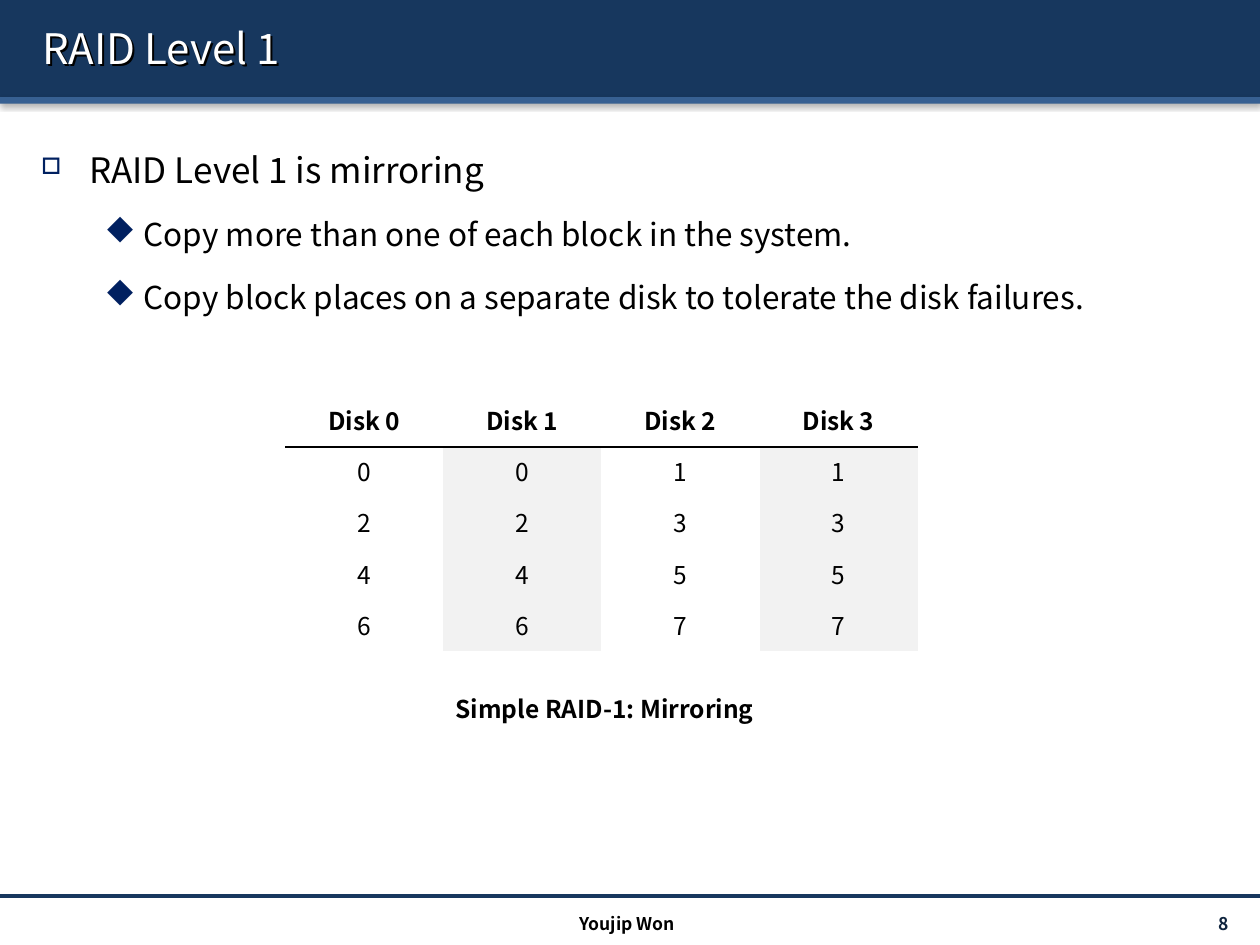
from lxml.etree import SubElement
from pptx import Presentation
from pptx.dml.color import RGBColor
from pptx.enum.shapes import MSO_CONNECTOR, MSO_SHAPE
from pptx.enum.text import MSO_ANCHOR, PP_ALIGN
from pptx.oxml.ns import qn
from pptx.util import Cm, Pt

FONT = "Noto Sans CJK KR"
COLORS = {
    "navy": "17375E",
    "blue": "376092",
    "bullet": "002060",
    "page": "0F243E",
    "black": "000000",
    "white": "FFFFFF",
    "mirror": "F2F2F2",
}
NO_TABLE_STYLE = "{2D5ABB26-0587-4C30-8999-92F81FD0307C}"

POINTS = [
    (0, "RAID Level 1 is mirroring"),
    (1, "Copy more than one of each block in the system."),
    (1, "Copy block places on a separate disk to tolerate the disk failures."),
]
# Per level: font size, left indent and hanging width in cm,
# Wingdings character (o is a square, u a diamond), bullet size in percent
LEVELS = [(20, 0.97, 0.97, "o", 65), (18, 2.07, 0.79, "u", 100)]

DISKS = ["Disk 0", "Disk 1", "Disk 2", "Disk 3"]
STRIPES = [[n, n, n + 1, n + 1] for n in range(0, 8, 2)]


def rgb(name):
    return RGBColor.from_string(COLORS[name])


def add_xml(parent, tag, **attributes):
    return SubElement(parent, qn(tag), {key: str(value) for key, value in attributes.items()})


def add_shadow(shape, blur, distance, direction, alpha):
    effects = add_xml(shape._element.spPr, "a:effectLst")
    shadow = add_xml(effects, "a:outerShdw", blurRad=Pt(blur), dist=Pt(distance),
                     dir=direction * 60000, algn="t", rotWithShape=0)
    color = add_xml(shadow, "a:srgbClr", val=COLORS["black"])
    add_xml(color, "a:alpha", val=alpha * 1000)


def set_font(paragraph, size, color="black", bold=False):
    font = paragraph.font
    font.name, font.size, font.bold = FONT, Pt(size), bold
    font.color.rgb = rgb(color)


def add_label(slide, box, text, size, color="black", bold=False,
              align=PP_ALIGN.LEFT, anchor=MSO_ANCHOR.TOP):
    label = slide.shapes.add_textbox(*map(Cm, box))
    frame = label.text_frame
    frame.word_wrap = True
    frame.vertical_anchor = anchor
    paragraph = frame.paragraphs[0]
    paragraph.text = text
    paragraph.alignment = align
    set_font(paragraph, size, color, bold)
    return label


def add_header(slide, box, title):
    left, top, width, height = box
    strip_height = 0.13
    band_height = height - strip_height
    for color, y, part_height in (("navy", top, band_height),
                                  ("blue", top + band_height, strip_height)):
        band = slide.shapes.add_shape(MSO_SHAPE.RECTANGLE, Cm(left), Cm(y),
                                      Cm(width), Cm(part_height))
        band.fill.solid()
        band.fill.fore_color.rgb = rgb(color)
        band.line.fill.background()
        add_shadow(band, 3.1, 1.6, 90, 38)
    heading = add_label(slide, (left + 0.6, top + 0.15, width - 0.99, 1.63), title,
                        24, "white", anchor=MSO_ANCHOR.MIDDLE)
    add_shadow(heading, 0, 1.6, 45, 100)


def add_points(slide, box, points):
    frame = slide.shapes.add_textbox(*map(Cm, box)).text_frame
    frame.word_wrap = True
    for index, (level, text) in enumerate(points):
        size, indent, hanging, bullet, bullet_size = LEVELS[level]
        paragraph = frame.add_paragraph() if index else frame.paragraphs[0]
        paragraph.text = text
        paragraph.level = level
        paragraph.line_spacing = 1.5
        if index:
            paragraph.space_before = Pt(size * 0.2)
        properties = paragraph._p.get_or_add_pPr()
        properties.set("marL", str(Cm(indent)))
        properties.set("indent", str(-Cm(hanging)))
        bullet_color = add_xml(properties, "a:buClr")
        add_xml(bullet_color, "a:srgbClr", val=COLORS["bullet"])
        add_xml(properties, "a:buSzPct", val=bullet_size * 1000)
        add_xml(properties, "a:buFont", typeface="Wingdings", pitchFamily=2, charset=2)
        add_xml(properties, "a:buChar", char=bullet)
        set_font(paragraph, size)


def set_borders(cell, ruled_side):
    """Draw a thin line on one side and none on the others; call before filling the cell."""
    properties = cell._tc.get_or_add_tcPr()
    for side in ("a:lnL", "a:lnR", "a:lnT", "a:lnB"):
        if side == ruled_side:
            border = add_xml(properties, side, w=Pt(0.75))
            fill = add_xml(border, "a:solidFill")
            add_xml(fill, "a:srgbClr", val=COLORS["black"])
        else:
            add_xml(add_xml(properties, side), "a:noFill")


def add_disks(slide, box, disks, stripes):
    rows = [disks, *stripes]
    table = slide.shapes.add_table(len(rows), len(disks), *map(Cm, box)).table
    table.horz_banding = False
    table._tbl.tblPr.find(qn("a:tableStyleId")).text = NO_TABLE_STYLE
    ruled_sides = {0: "a:lnB", 1: "a:lnT"}
    for r, row in enumerate(rows):
        for c, block in enumerate(row):
            cell = table.cell(r, c)
            set_borders(cell, ruled_sides.get(r))
            cell.fill.solid()
            cell.fill.fore_color.rgb = rgb("mirror" if r and c % 2 else "white")
            paragraph = cell.text_frame.paragraphs[0]
            paragraph.text = str(block)
            paragraph.alignment = PP_ALIGN.CENTER
            set_font(paragraph, 14, bold=r == 0)


def add_footer(slide, box, author, page):
    left, top, width, _ = box
    rule = slide.shapes.add_connector(MSO_CONNECTOR.STRAIGHT, Cm(left), Cm(top),
                                      Cm(left + width), Cm(top))
    rule.line.color.rgb = rgb("navy")
    rule.line.width = Pt(2)
    add_xml(rule._element.spPr, "a:effectLst")
    add_label(slide, (left + 22.06, top + 0.25, 2.97, 0.61), page, 10, "page", True,
              PP_ALIGN.RIGHT, MSO_ANCHOR.MIDDLE)
    add_label(slide, (left + 8.43, top + 0.23, 8.43, 0.61), author, 10, bold=True,
              align=PP_ALIGN.CENTER)


def main():
    deck = Presentation()
    deck.slide_width, deck.slide_height = Cm(25.4), Cm(19.05)
    slide = deck.slides.add_slide(deck.slide_layouts[6])
    add_header(slide, (0, 0, 25.4, 2.09), "RAID Level 1")
    add_points(slide, (0.58, 2.44, 24.41, 15.29), POINTS)
    add_disks(slide, (5.75, 7.98, 12.75, 5.15), DISKS, STRIPES)
    add_label(slide, (7.3, 13.87, 9.78, 0.86), "Simple RAID-1: Mirroring", 14,
              bold=True, align=PP_ALIGN.CENTER)
    add_footer(slide, (0, 18.06, 25.4, 0.99), "Youjip Won", "8")
    deck.save("out.pptx")


if __name__ == "__main__":
    main()
